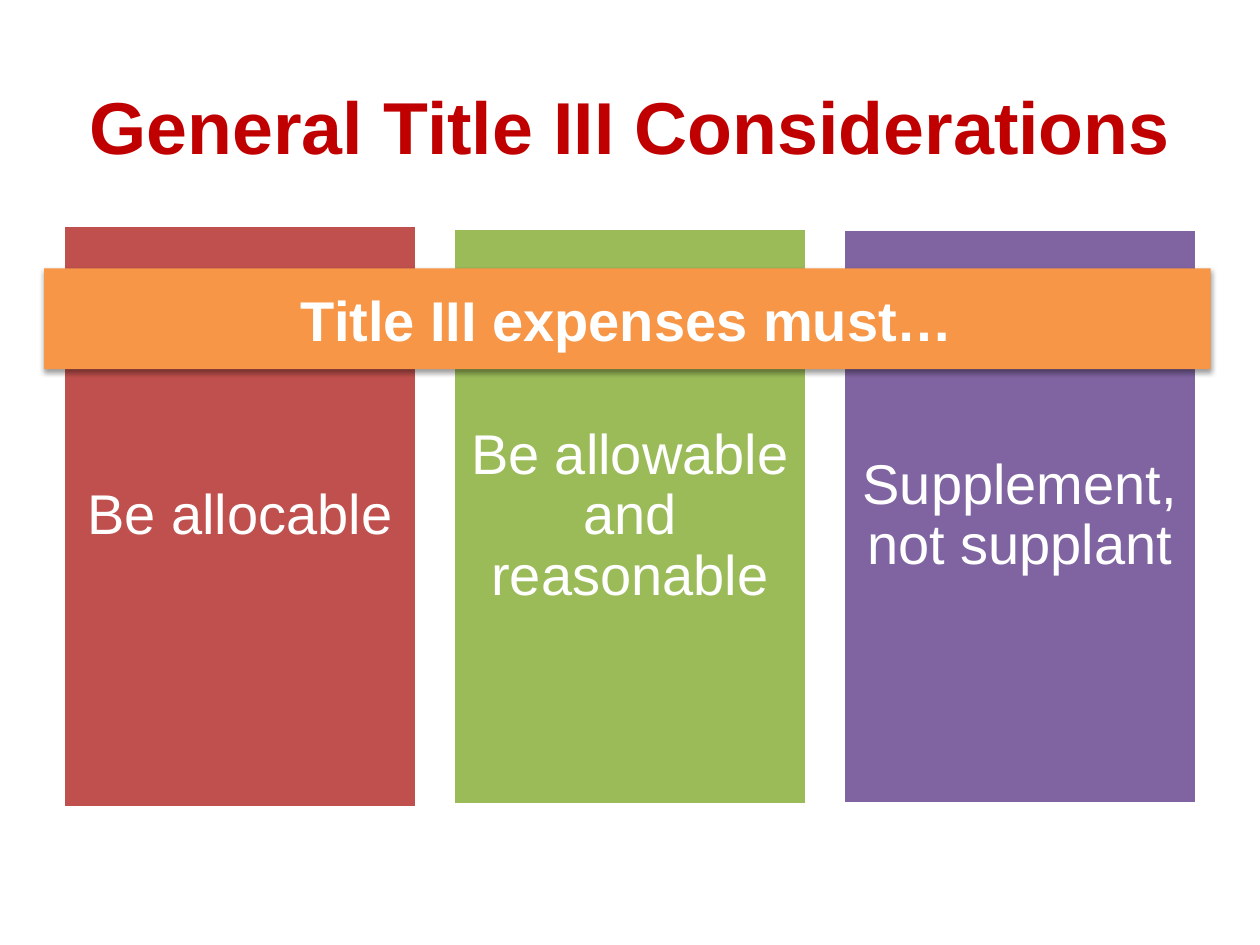
from lxml import etree
from pptx import Presentation
from pptx.dml.color import RGBColor
from pptx.enum import shapes, text
from pptx.oxml import ns
from pptx.util import Inches, Pt

WHITE = RGBColor(0xFF, 0xFF, 0xFF)
TITLE_RED = RGBColor(0xC0, 0x00, 0x00)
RED = RGBColor(0xC0, 0x50, 0x4D)
GREEN = RGBColor(0x9B, 0xBB, 0x59)
PURPLE = RGBColor(0x80, 0x64, 0xA2)
ORANGE = RGBColor(0xF7, 0x96, 0x46)

COLUMNS = [
    ("Be allocable", RED, 4.63),
    ("Be allowable and reasonable", GREEN, 4.58),
    ("Supplement, not supplant", PURPLE, 4.56),
]
COLUMN_LEFT, COLUMN_STEP, COLUMN_WIDTH, COLUMN_MIDDLE = 0.5, 3.095, 2.81, 4.1


def write(frame, wording, size, color, bold=False):
    """Fill a text frame with one centred paragraph and return it."""
    frame.word_wrap = True
    frame.vertical_anchor = text.MSO_ANCHOR.MIDDLE
    para = frame.paragraphs[0]
    para.text = wording
    para.alignment = text.PP_ALIGN.CENTER
    para.font.name = "Arial"
    para.font.size = Pt(size)
    para.font.bold = bold
    para.font.color.rgb = color
    return para


def set_margins(frame, margin):
    """Give all four sides of a text frame the same margin in inches."""
    frame.margin_left = frame.margin_right = Inches(margin)
    frame.margin_top = frame.margin_bottom = Inches(margin)


def add_title(page, wording):
    """Place and format the title placeholder."""
    title = page.shapes.title
    title.left, title.top = Inches(0.5), Inches(0.64)
    title.width, title.height = Inches(9), Inches(0.71)
    set_margins(title.text_frame, 0)
    write(title.text_frame, wording, 42, TITLE_RED, bold=True)
    title.text_frame.auto_size = text.MSO_AUTO_SIZE.SHAPE_TO_FIT_TEXT


def add_rectangle(page, left, top, width, height, fill):
    """Add a filled rectangle without a shadow."""
    box = page.shapes.add_shape(
        shapes.MSO_SHAPE.RECTANGLE,
        Inches(left), Inches(top), Inches(width), Inches(height))
    box.shadow.inherit = False
    box.fill.solid()
    box.fill.fore_color.rgb = fill
    return box


def add_column(page, index, wording, fill, height):
    """Add one requirement column, centred on the shared middle line."""
    left = COLUMN_LEFT + index * COLUMN_STEP
    box = add_rectangle(page, left, COLUMN_MIDDLE - height / 2,
                        COLUMN_WIDTH, height, fill)
    box.line.color.rgb = WHITE
    box.line.width = Pt(2)
    set_margins(box.text_frame, 0.13)
    write(box.text_frame, wording, 32, WHITE).line_spacing = 0.9


def add_shadow(box):
    """Give a shape a soft shadow below it."""
    effects = box._element.spPr.find(ns.qn("a:effectLst"))
    shadow = etree.SubElement(
        effects, ns.qn("a:outerShdw"), blurRad=str(Pt(3.1)),
        dist=str(Pt(1.6)), dir="5400000", rotWithShape="0")
    color = etree.SubElement(shadow, ns.qn("a:srgbClr"), val="000000")
    etree.SubElement(color, ns.qn("a:alpha"), val="38000")


def add_banner(page, wording):
    """Add the banner that crosses all columns."""
    box = add_rectangle(page, 0.35, 2.13, 9.26, 0.8, ORANGE)
    box.line.fill.background()
    add_shadow(box)
    write(box.text_frame, wording, 32, WHITE, bold=True)


def main():
    """Build and save the slide."""
    deck = Presentation()
    deck.slide_width, deck.slide_height = Inches(10), Inches(7.5)
    page = deck.slides.add_slide(deck.slide_layouts[5])
    add_title(page, "General Title III Considerations")
    for index, (wording, fill, height) in enumerate(COLUMNS):
        add_column(page, index, wording, fill, height)
    add_banner(page, "Title III expenses must…")
    deck.save("out.pptx")


if __name__ == "__main__":
    main()
